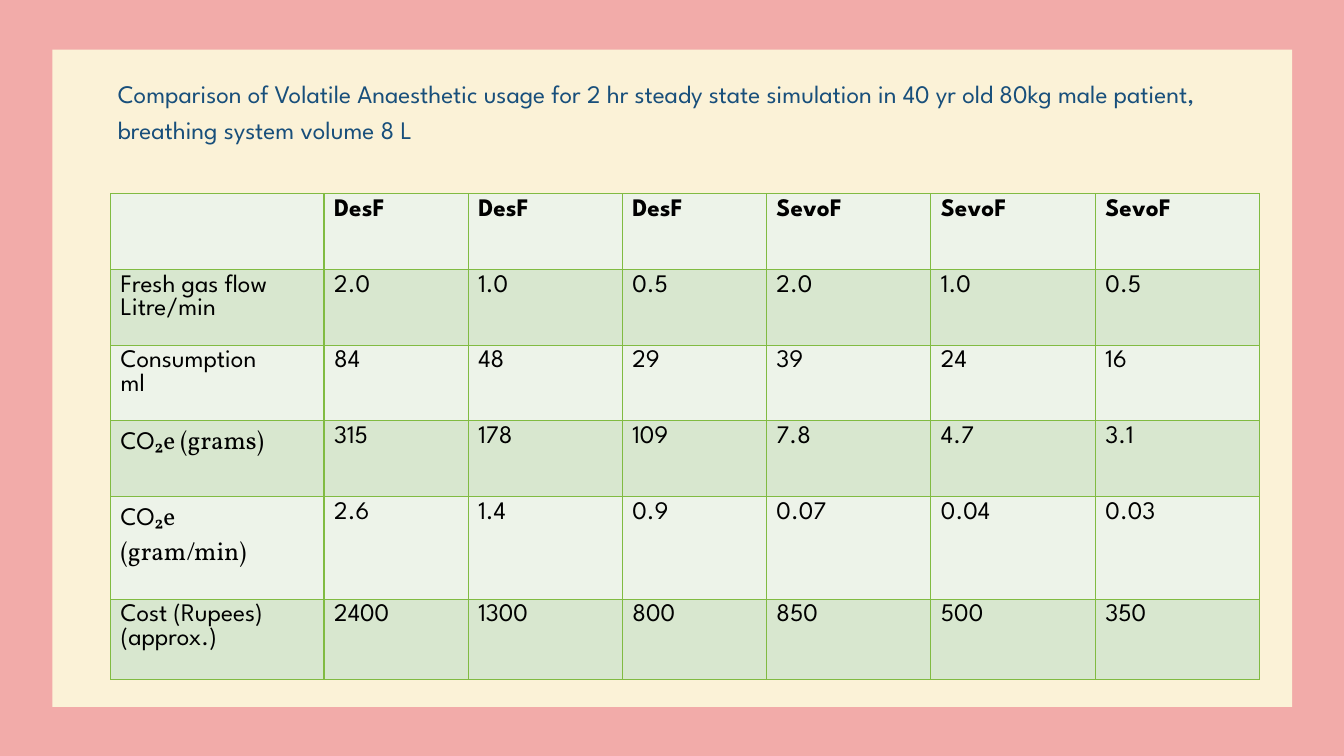
from lxml.etree import SubElement as Sub
from pptx import Presentation as Deck
from pptx.dml.color import RGBColor as Rgb
from pptx.enum.shapes import MSO_SHAPE as Shape
from pptx.enum.text import MSO_ANCHOR as Anchor, MSO_AUTO_SIZE as Fit, PP_ALIGN as Align
from pptx.oxml.ns import qn
from pptx.util import Pt

HUES = {"back": "F2ABA9", "panel": "FBF2D7", "title": "184F7B", "text": "000000",
        "line": "81BB42", "light": "EDF3E9", "dark": "D8E7CF"}
SANS, SERIF = "League Spartan", "Vollkorn"
TITLE = ("Comparison of Volatile Anaesthetic usage for 2 hr steady state simulation "
         "in 40 yr old 80kg male patient, breathing system volume 8 L")

# Each row: height, label paragraphs made of (text, font) runs, values
ROWS = [
    (54, [], ["DesF"] * 3 + ["SevoF"] * 3),
    (54, [[("Fresh gas flow", SANS)], [("Litre/min", SANS)]],
     ["2.0", "1.0", "0.5"] * 2),
    (54, [[("Consumption", SANS)], [("ml", SANS)]],
     ["84", "48", "29", "39", "24", "16"]),
    (54, [[("CO", SANS), ("₂e (grams)", SERIF)]],
     ["315", "178", "109", "7.8", "4.7", "3.1"]),
    (73.5, [[("CO", SANS), ("₂e", SERIF)], [("(gram/min)", SERIF)]],
     ["2.6", "1.4", "0.9", "0.07", "0.04", "0.03"]),
    (57.5, [[("Cost (Rupees)", SANS)], [("(approx.)", SANS)]],
     ["2400", "1300", "800", "850", "500", "350"]),
]
COLS = [152.5, 103, 110, 103, 117.5, 117.5, 117.5]


def hue(name):
    return Rgb.from_string(HUES[name])


def add_run(para, text, face=SANS, tint="text", bold=False):
    run = para.add_run()
    run.text = text
    font = run.font
    font.name, font.size, font.bold = face, Pt(18), bold
    font.color.rgb = hue(tint)


def add_title(slide, left, top, width, height):
    title = slide.shapes.title
    title.left, title.top, title.width, title.height = map(Pt, (left, top, width, height))
    frame = title.text_frame
    frame.word_wrap, frame.auto_size = True, Fit.NONE
    frame.vertical_anchor = Anchor.TOP
    para = frame.paragraphs[0]
    para.alignment, para.line_spacing, para.space_after = Align.LEFT, Pt(25.7), Pt(6)
    add_run(para, TITLE, tint="title")


def add_panel(slide, left, top, width, height):
    panel = slide.shapes.add_shape(Shape.RECTANGLE, *map(Pt, (left, top, width, height)))
    panel.shadow.inherit = False
    panel.fill.solid()
    panel.fill.fore_color.rgb = hue("panel")
    panel.line.fill.background()
    # Keep the panel behind the title
    slide.shapes.title.element.addprevious(panel.element)


def style_cell(cell, tint):
    props = cell._tc.get_or_add_tcPr()
    for side in ("lnL", "lnR", "lnT", "lnB"):
        line = Sub(props, qn("a:" + side), w=str(Pt(1)))
        Sub(Sub(line, qn("a:solidFill")), qn("a:srgbClr"), val=HUES["line"])
    cell.fill.solid()
    cell.fill.fore_color.rgb = hue(tint)


def fill_cell(cell, paras, bold):
    frame = cell.text_frame
    for i, runs in enumerate(paras):
        para = frame.add_paragraph() if i else frame.paragraphs[0]
        for text, face in runs:
            add_run(para, text, face, bold=bold)


def add_grid(slide, left, top):
    size = sum(COLS), sum(row[0] for row in ROWS)
    table = slide.shapes.add_table(len(ROWS), len(COLS), *map(Pt, (left, top, *size))).table
    table.first_row = table.horz_banding = False
    for col, width in zip(table.columns, COLS):
        col.width = Pt(width)
    for r, (height, label, values) in enumerate(ROWS):
        table.rows[r].height = Pt(height)
        texts = [label] + [[[(value, SANS)]] for value in values]
        for c, paras in enumerate(texts):
            cell = table.cell(r, c)
            style_cell(cell, "dark" if r % 2 else "light")
            fill_cell(cell, paras, bold=r == 0)


def main():
    deck = Deck()
    deck.slide_width, deck.slide_height = Pt(960), Pt(540)
    slide = deck.slides.add_slide(deck.slide_layouts[5])
    slide.background.fill.solid()
    slide.background.fill.fore_color.rgb = hue("back")
    add_panel(slide, 37.5, 35.5, 885.5, 469.5)
    add_title(slide, 77, 48.25, 799, 75)
    add_grid(slide, 79, 138.5)
    deck.save("out.pptx")


if __name__ == "__main__":
    main()
